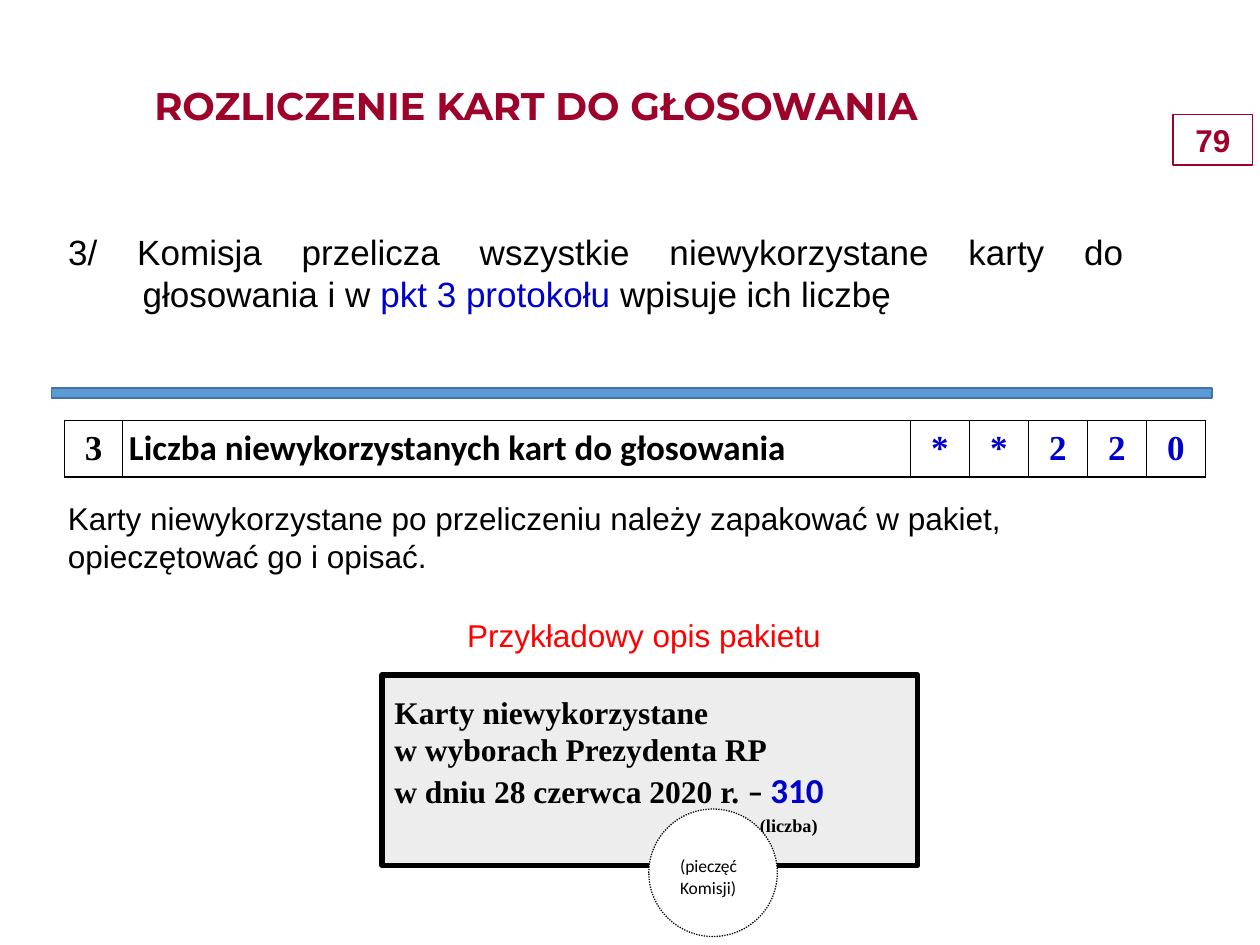
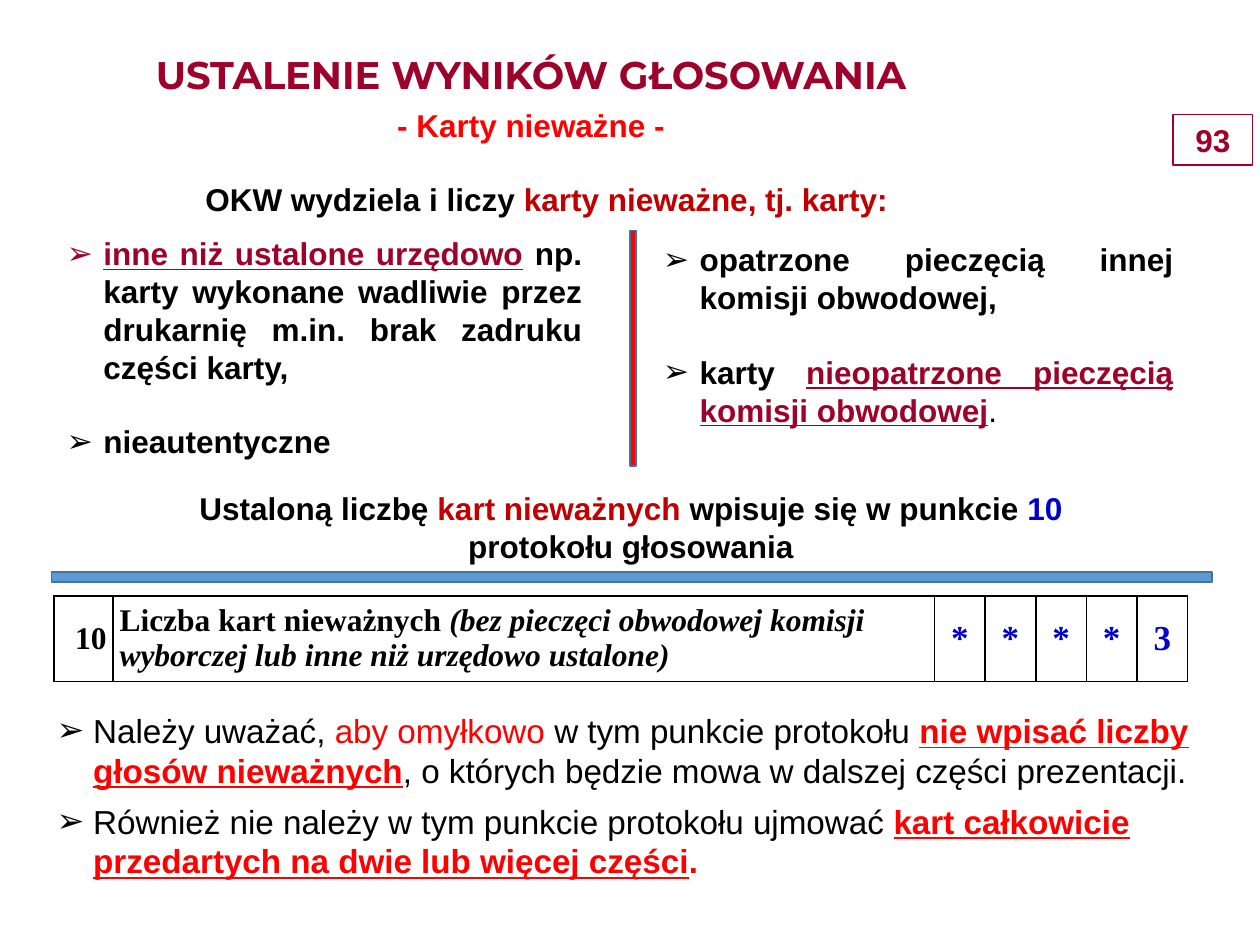
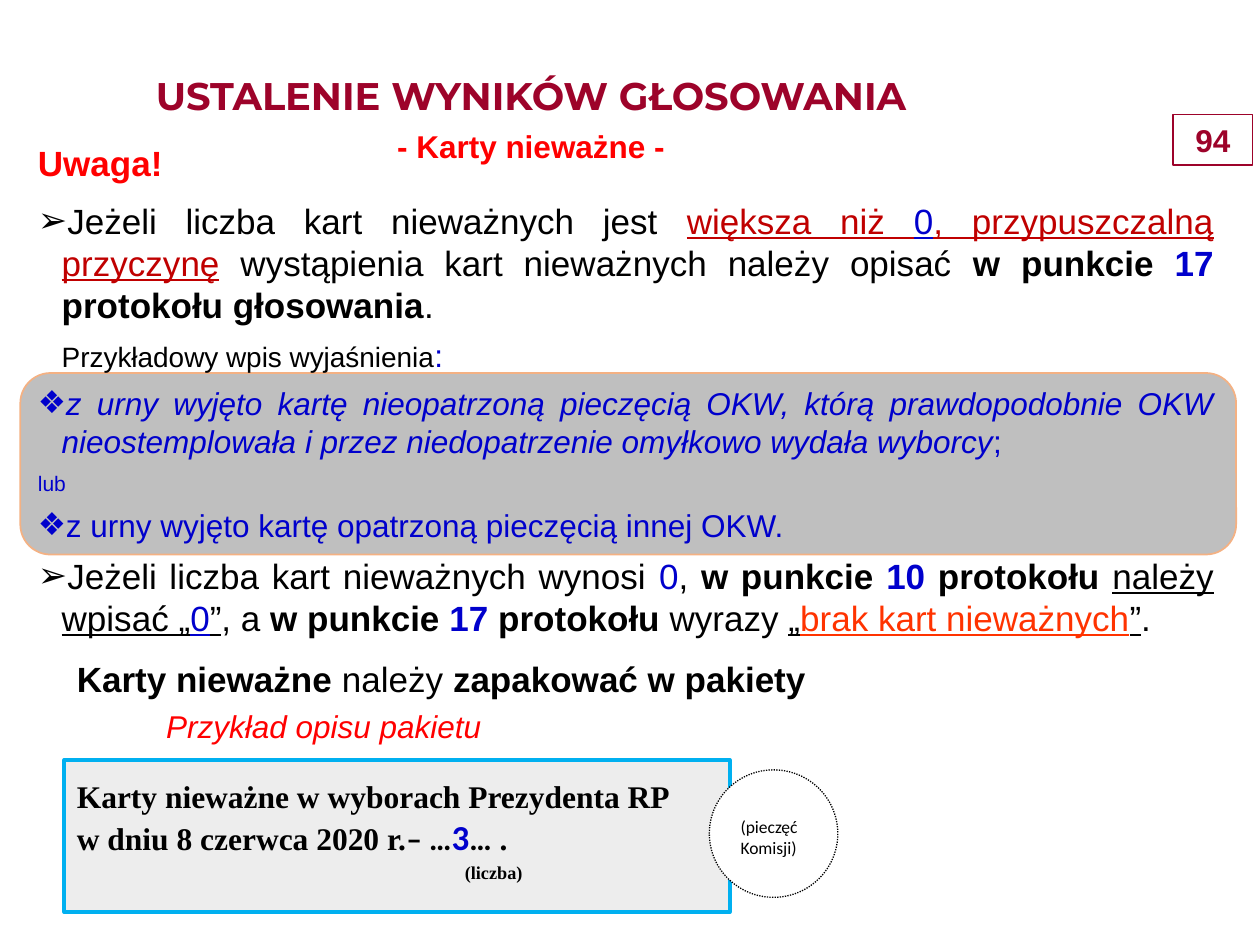
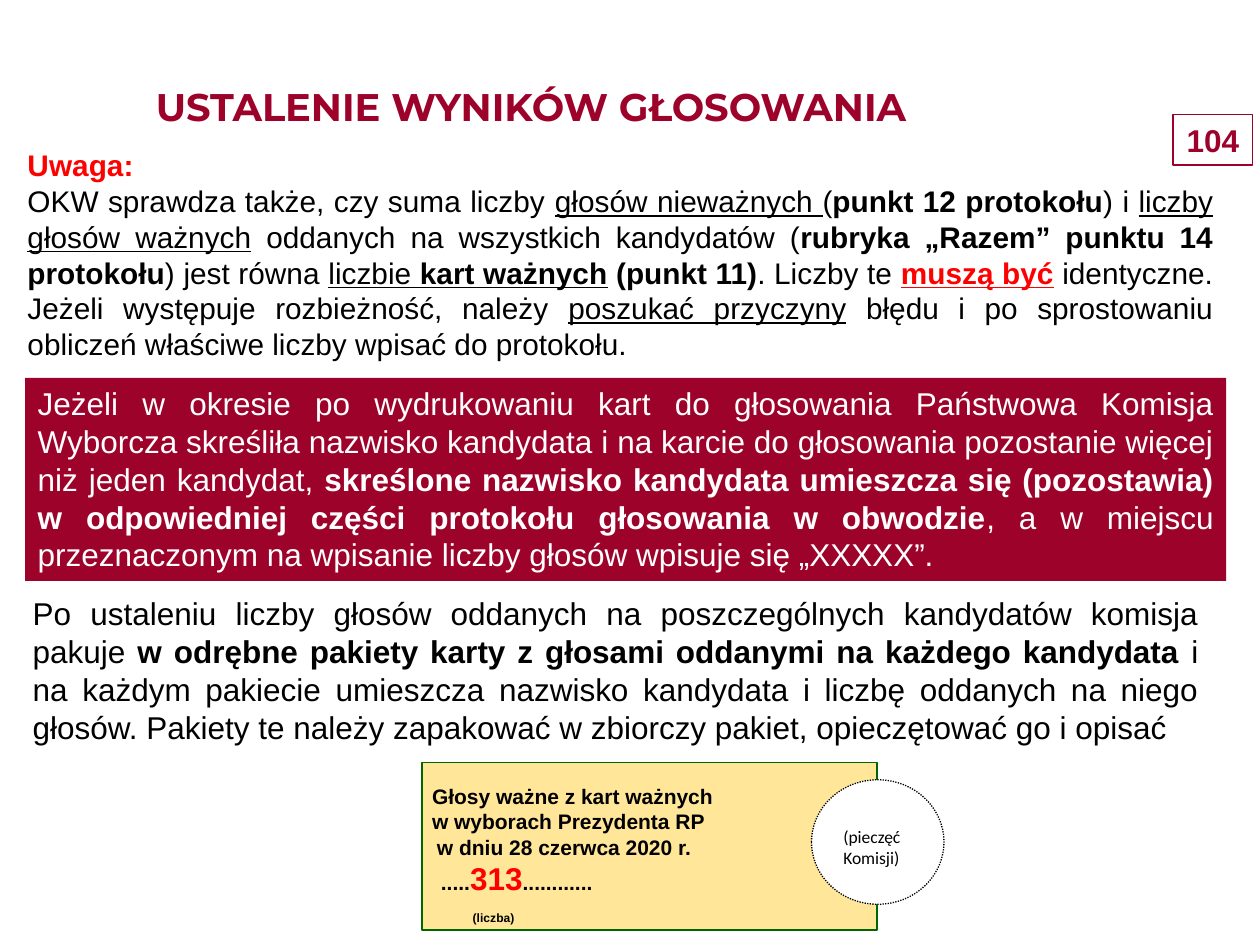
from dataclasses import dataclass, field

from lxml import etree
from pptx import Presentation
from pptx import util as u
from pptx.dml.color import RGBColor
from pptx.enum import dml, shapes, text
from pptx.oxml import ns

Cm, Pt = u.Cm, u.Pt
RECT = shapes.MSO_SHAPE.RECTANGLE
LEFT, MID, JUST = (text.PP_ALIGN.LEFT, text.PP_ALIGN.CENTER,
                   text.PP_ALIGN.JUSTIFY)
RIGHT = text.PP_ALIGN.RIGHT
TOP, CENTRE = text.MSO_ANCHOR.TOP, text.MSO_ANCHOR.MIDDLE


@dataclass
class Theme:
    colors: dict = field(default_factory=lambda: {
        "black": "000000", "white": "FFFFFF", "wine": "9D032A",
        "blue": "0000CC", "red": "FF0000", "brick": "C00000",
        "orange": "FF3300", "sky": "5B9BD5", "steel": "43739E",
        "pale": "EDEDED", "cyan": "00B0F0", "grey": "BFBFBF",
        "peach": "F4B183", "sand": "FFE699", "green": "006600"})
    sizes: dict = field(default_factory=lambda: {
        "head": 22, "big": 20, "list": 19, "norm": 18, "note": 17,
        "small": 16, "tiny": 12, "seal": 10})
    fonts: dict = field(default_factory=lambda: {
        "sans": "Arial", "serif": "Times New Roman",
        "calibri": "Calibri", "title": "Montserrat"})
    flags: dict = field(default_factory=lambda: {
        "b": "bold", "i": "italic", "u": "underline"})

    def rgb(self, name):
        return RGBColor.from_string(self.colors[name])


T = Theme()
ARROW, GEM = "➢", "❖"
PAGE = (23.65, 2.31, 1.6, 1.02)
RULE = (1.04, 23.39, 0.2)
SEAL = (2.59, 2.57)
RESULT = "USTALENIE WYNIKÓW GŁOSOWANIA"
INVALID = "- Karty nieważne -"


def place(shape, box):
    for name, size in zip(("left", "top", "width", "height"), box):
        setattr(shape, name, Cm(size))


def style(run, words):
    """Apply style words such as "big blue b" to a run."""
    font = run.font
    values = {"bold": False, "italic": False, "name": T.fonts["sans"]}
    color = "black"
    for word in words.split():
        if word in T.colors:
            color = word
        elif word in T.sizes:
            values["size"] = Pt(T.sizes[word])
        elif word in T.fonts:
            values["name"] = T.fonts[word]
        elif word in T.flags:
            values[T.flags[word]] = True
        elif word == "sup":
            font._element.set("baseline", "30000")
    for name, value in values.items():
        setattr(font, name, value)
    font.color.rgb = T.rgb(color)


def para(*runs, **form):
    """Describe a paragraph: runs are plain text or (text, style words)."""
    return runs, form


def point(*runs, mark=ARROW, indent=0.74, hang=None, **form):
    return para(*runs, mark=mark, indent=indent,
                hang=indent if hang is None else hang, **form)


def fill(frame, base, paras, align=LEFT, anchor=TOP, inset=None):
    """Write paragraphs into a frame; base styles every run."""
    values = {"word_wrap": True, "auto_size": text.MSO_AUTO_SIZE.NONE,
              "vertical_anchor": anchor}
    if inset:
        sides = ("left", "top", "right", "bottom")
        values |= {f"margin_{s}": Cm(v) for s, v in zip(sides, inset)}
    for name, value in values.items():
        setattr(frame, name, value)
    for num, (runs, form) in enumerate(paras):
        par = frame.add_paragraph() if num else frame.paragraphs[0]
        par.alignment = form.get("align", align)
        par.space_before = Pt(form.get("before", 0))
        par.space_after = Pt(form.get("after", 0))
        prop = par._p.get_or_add_pPr()
        prop.set("marL", str(Cm(form.get("indent", 0))))
        prop.set("indent", str(-Cm(form.get("hang", 0))))
        mark = form.get("mark")
        if mark:
            etree.SubElement(prop, ns.qn("a:buFont"), typeface="Arial")
            etree.SubElement(prop, ns.qn("a:buChar"), char=mark)
        else:
            etree.SubElement(prop, ns.qn("a:buNone"))
        for item in runs:
            words, look = (item, "") if isinstance(item, str) else item
            run = par.add_run()
            run.text = words
            style(run, f"{base} {look}")


def note(slide, box, base, *paras, **form):
    shape = slide.shapes.add_textbox(*map(Cm, box))
    fill(shape.text_frame, base, paras, **form)


def body(slide, num, box, base, *paras, **form):
    """Fill the template's body placeholder with the given index."""
    shape = slide.placeholders[num]
    place(shape, box)
    fill(shape.text_frame, base, paras, **form)
    return shape


def panel(slide, box, color=None, line=None, width=1, kind=RECT):
    shape = slide.shapes.add_shape(kind, *map(Cm, box))
    shape.shadow.inherit = False
    if color:
        shape.fill.solid()
        shape.fill.fore_color.rgb = T.rgb(color)
    else:
        shape.fill.background()
    if line:
        shape.line.color.rgb = T.rgb(line)
        shape.line.width = Pt(width)
    else:
        shape.line.fill.background()
    return shape


def rule(slide, top):
    left, width, height = RULE
    panel(slide, (left, top, width, height), "sky", "steel")


def seal(slide, box):
    shape = panel(slide, box, "white", "black", 0.75, shapes.MSO_SHAPE.OVAL)
    shape.line.dash_style = dml.MSO_LINE.ROUND_DOT
    fill(shape.text_frame, "seal calibri", [para("(pieczęć Komisji)")],
         inset=(0.25, 0.56, 0.25, 0.13))


def packet(slide, box, look, base, paras, shift, size=SEAL, **form):
    """Label of a sealed packet, with the seal shifted from its corner."""
    shape = panel(slide, box, *look)
    fill(shape.text_frame, base, paras, **form)
    seal(slide, (box[0] + shift[0], box[1] + shift[1], *size))


def edge(cell):
    prop = cell._tc.get_or_add_tcPr()
    for side in "LRTB":
        line = etree.SubElement(prop, ns.qn(f"a:ln{side}"), w=str(Pt(1)))
        solid = etree.SubElement(line, ns.qn("a:solidFill"))
        etree.SubElement(solid, ns.qn("a:srgbClr"), val=T.colors["black"])
    cell.fill.background()


def entry(slide, spot, cols, height, number, label, digits):
    """One row of the protocol: number, label and a box for each digit."""
    first, wide, small = cols
    widths = [first, wide] + [small] * len(digits)
    frame = slide.shapes.add_table(
        1, len(widths), *map(Cm, (*spot, sum(widths), height)))
    table = frame.table
    table.first_row = table.horz_banding = False
    table.rows[0].height = Cm(height)
    marks = [para((d, "big serif blue b"), align=MID) for d in digits]
    for num, (width, words) in enumerate(zip(widths, [number, label] + marks)):
        table.columns[num].width = Cm(width)
        cell = table.cell(0, num)
        edge(cell)
        fill(cell.text_frame, "", [words])
        cell.vertical_anchor = CENTRE
        for side, gap in dict(left=0.13, right=0.13, top=0, bottom=0).items():
            setattr(cell, f"margin_{side}", Cm(gap))


def start(deck, layout, number, box, head, sub=None):
    """Add a slide with its title and page number."""
    slide = deck.slides.add_slide(deck.slide_layouts[layout])
    paras = [para((head, "head title wine"))]
    if sub:
        paras.append(para((sub, "norm red"), before=5))
    place(slide.shapes.title, box)
    fill(slide.shapes.title.text_frame, "b", paras, align=MID)
    page = panel(slide, PAGE, None, "wine", 0.75)
    fill(page.text_frame, "norm wine b", [para(str(number))], align=MID,
         anchor=CENTRE, inset=(0, 0, 0, 0))
    return slide


def unused(deck):
    slide = start(deck, 1, 79, (1.9, 1.52, 17.81, 1.19),
                  "ROZLICZENIE KART DO GŁOSOWANIA")
    body(slide, 1, (1.12, 4.52, 21.79, 1.96), "big", point(
        "3/ Komisja przelicza wszystkie niewykorzystane karty do "
        "głosowania i w ", ("pkt 3 protokołu ", "blue"),
        "wpisuje ich liczbę", mark=None, indent=1.5), align=JUST)
    rule(slide, 7.82)
    entry(slide, (1.3, 8.48), (1.17, 15.88, 1.19), 1.14,
          para(("3", "big serif b"), align=MID),
          para(("Liczba niewykorzystanych kart do głosowania",
                "big calibri b")), "**220")
    note(slide, (1.12, 9.93, 22.2, 1.8), "norm", para(
        "Karty niewykorzystane po przeliczeniu należy zapakować w pakiet, "
        "opieczętować go i opisać."))
    note(slide, (9.17, 12.29, 7.87, 1.02), "norm red",
         para("Przykładowy opis pakietu"))
    packet(slide, (7.7, 13.61, 10.8, 3.84), ("pale", "black", 3),
           "norm serif b", [
               para("Karty niewykorzystane"),
               para("w wyborach Prezydenta RP"),
               para("w dniu 28 czerwca 2020 r. ", ("– ", "calibri"),
                    ("310", "big calibri blue")),
               para(("(liczba)", "sup"), indent=7.37, align=LEFT)],
           (5.38, 2.7), align=JUST, anchor=CENTRE)


def invalid(deck):
    slide = start(deck, 3, 93, (0.1, 0.91, 21.21, 2.13), RESULT, INVALID)
    note(slide, (3.89, 3.51, 15.39, 1.02), "norm b", para(
        "OKW wydziela i liczy ", ("karty nieważne, tj. karty:", "brick")))
    body(slide, 1, (1.09, 4.6, 10.9, 4.88), "norm b",
         point(("inne niż ustalone urzędowo", "wine u"),
               " np. karty wykonane wadliwie przez drukarnię m.in. brak "
               "zadruku części karty,"),
         point("nieautentyczne", before=21), align=JUST)
    body(slide, 2, (13.11, 4.72, 10.8, 4.09), "norm",
         point(("opatrzone pieczęcią innej komisji obwodowej,", "b")),
         point(("karty ", "b"),
               ("nieopatrzone pieczęcią komisji obwodowej", "wine b u"),
               ".", before=21), align=JUST)
    panel(slide, (12.7, 4.65, 0.13, 4.75), "red", "steel")
    note(slide, (3.51, 9.73, 18.42, 2.57), "norm b", para(
        "Ustaloną liczbę ", ("kart nieważnych ", "brick"),
        "wpisuje się w punkcie ", ("10", "blue"),
        " protokołu głosowania"), align=MID)
    rule(slide, 11.53)
    entry(slide, (1.09, 12.01), (1.19, 16.56, 1.02), 1.73,
          para(("10", "norm serif b"), align=RIGHT),
          para(("Liczba kart nieważnych ", "norm serif b"),
               ("(bez pieczęci obwodowej komisji wyborczej lub inne niż "
                "urzędowo ustalone)", "norm serif b i")), "****3")
    note(slide, (0.89, 14.2, 23.6, 3.71), "list",
         point("Należy uważać, ", ("aby omyłkowo ", "red"),
               "w tym punkcie protokołu ",
               ("nie wpisać liczby głosów nieważnych", "red b u"),
               ", o których będzie mowa w dalszej części prezentacji.",
               after=6),
         point("Również nie należy w tym punkcie protokołu ujmować ",
               ("kart całkowicie przedartych na dwie lub więcej części",
                "red b u"), (".", "red b")))


def reasons(deck):
    slide = start(deck, 1, 94, (0.1, 1.32, 21.21, 2.13), RESULT, INVALID)
    step = dict(indent=0.48, after=6)
    text_box = body(
        slide, 1, (0.51, 2.72, 24.21, 10.39), "big",
        para(("Uwaga!", "red b"), align=LEFT),
        point("Jeżeli liczba kart nieważnych jest ",
              ("większa niż ", "brick u"), ("0", "blue u"),
              (", przypuszczalną przyczynę", "brick u"),
              " wystąpienia kart nieważnych należy opisać ",
              ("w punkcie ", "b"), ("17", "blue b"),
              (" protokołu głosowania", "b"), ".", before=9, **step),
        para(("Przykładowy wpis wyjaśnienia", "small"),
             (":", "norm blue"), **step),
        point(("z urny wyjęto kartę nieopatrzoną pieczęcią OKW, którą "
               "prawdopodobnie OKW nieostemplowała i przez niedopatrzenie "
               "omyłkowo wydała wyborcy", "norm blue i"),
              (";", "norm blue"), mark=GEM, **step),
        para(("lub", "tiny blue"), after=6),
        point(("z urny wyjęto kartę opatrzoną pieczęcią innej OKW.",
               "norm blue"), mark=GEM, **step),
        point("Jeżeli liczba kart nieważnych wynosi ", ("0", "blue"), ", ",
              ("w punkcie ", "b"), ("10", "blue b"), (" protokołu ", "b"),
              ("należy wpisać „", "u"), ("0", "blue u"), ("”", "u"),
              ", a ", ("w punkcie ", "b"), ("17", "blue b"),
              (" protokołu", "b"), " wyrazy ", ("„", "u"),
              ("brak kart nieważnych", "orange u"), ("”", "u"), ".",
              indent=0.48),
        align=JUST)
    back = panel(slide, (0.41, 7.52, 24.51, 3.66), "grey", "peach",
                 kind=shapes.MSO_SHAPE.ROUNDED_RECTANGLE)
    text_box.element.addprevious(back.element)
    note(slide, (1.3, 13.13, 24, 1.12), "big", para(
        ("Karty nieważne", "b"), " należy ", ("zapakować w pakiety", "b")))
    note(slide, (3.1, 14.12, 7.29, 1.02), "norm red i",
         para("Przykład opisu pakietu"))
    packet(slide, (1.3, 15.32, 13.41, 3.07), ("pale", "cyan", 2.25),
           "norm serif b", [
               para("Karty nieważne w wyborach Prezydenta RP"),
               para("w dniu 8 czerwca 2020 r.", ("– …", "calibri"),
                    ("3", "big calibri blue"), ("…", "calibri"), " ."),
               para(("(liczba)", "sup"), indent=7.82, align=LEFT)],
           (13, 0.2), align=JUST, anchor=CENTRE)


def totals(deck):
    slide = start(deck, 1, 104, (0.1, 1.55, 21.21, 1.37), RESULT)
    body(slide, 1, (0.3, 2.84, 24.41, 4.62), "note",
         para(("Uwaga:", "red b"), align=LEFT),
         para("OKW sprawdza także, czy suma liczby ",
              ("głosów nieważnych ", "u"), "(",
              ("punkt 12 protokołu", "b"), ") i ",
              ("liczby głosów ważnych", "u"),
              " oddanych na wszystkich kandydatów (",
              ("rubryka „Razem” punktu 14 protokołu", "b"),
              ") jest równa ", ("liczbie ", "u"), ("kart ważnych", "b u"),
              (" (punkt 11)", "b"), ". Liczby te ",
              ("muszą być", "red b u"),
              " identyczne. Jeżeli występuje rozbieżność, należy ",
              ("poszukać przyczyny", "u"),
              " błędu i po sprostowaniu obliczeń właściwe liczby wpisać "
              "do protokołu."), align=JUST)
    banner = panel(slide, (0.51, 7.62, 24.21, 4.09), "wine")
    fill(banner.text_frame, "norm white", [para(
        "Jeżeli w okresie po wydrukowaniu kart do głosowania Państwowa "
        "Komisja Wyborcza skreśliła nazwisko kandydata i na karcie do "
        "głosowania pozostanie więcej niż jeden kandydat, ",
        ("skreślone nazwisko kandydata umieszcza się (pozostawia) "
         "w odpowiedniej części protokołu głosowania w obwodzie", "b"),
        ", a w miejscu przeznaczonym na wpisanie liczby głosów wpisuje "
        "się „XXXXX”.")], align=JUST)
    note(slide, (0.41, 11.86, 24, 3.43), "norm", para(
        "Po ustaleniu liczby głosów oddanych na poszczególnych kandydatów "
        "komisja pakuje ",
        ("w odrębne pakiety karty z głosami oddanymi na każdego kandydata ",
         "b"),
        "i na każdym pakiecie umieszcza nazwisko kandydata i liczbę "
        "oddanych na niego głosów. Pakiety te należy zapakować w zbiorczy "
        "pakiet, opieczętować go i opisać"), align=JUST)
    packet(slide, (8.51, 15.37, 9.17, 3.38), ("sand", "green"), "tiny b", [
        para("Głosy ważne z kart ważnych"),
        para("w wyborach Prezydenta RP"),
        para("w dniu 28 czerwca 2020 r.", indent=0.1),
        para(".....", ("313", "norm red"), "............", indent=0.18),
        para(("(liczba)", "sup"), indent=0.82, before=6)],
        (7.85, 0.35), (2.67, 2.51), inset=(0.2, 0.43, 0.25, 0))


def main():
    deck = Presentation()
    deck.slide_width, deck.slide_height = Cm(25.4), Cm(19.05)
    for build in (unused, invalid, reasons, totals):
        build(deck)
    deck.save("out.pptx")


if __name__ == "__main__":
    main()
